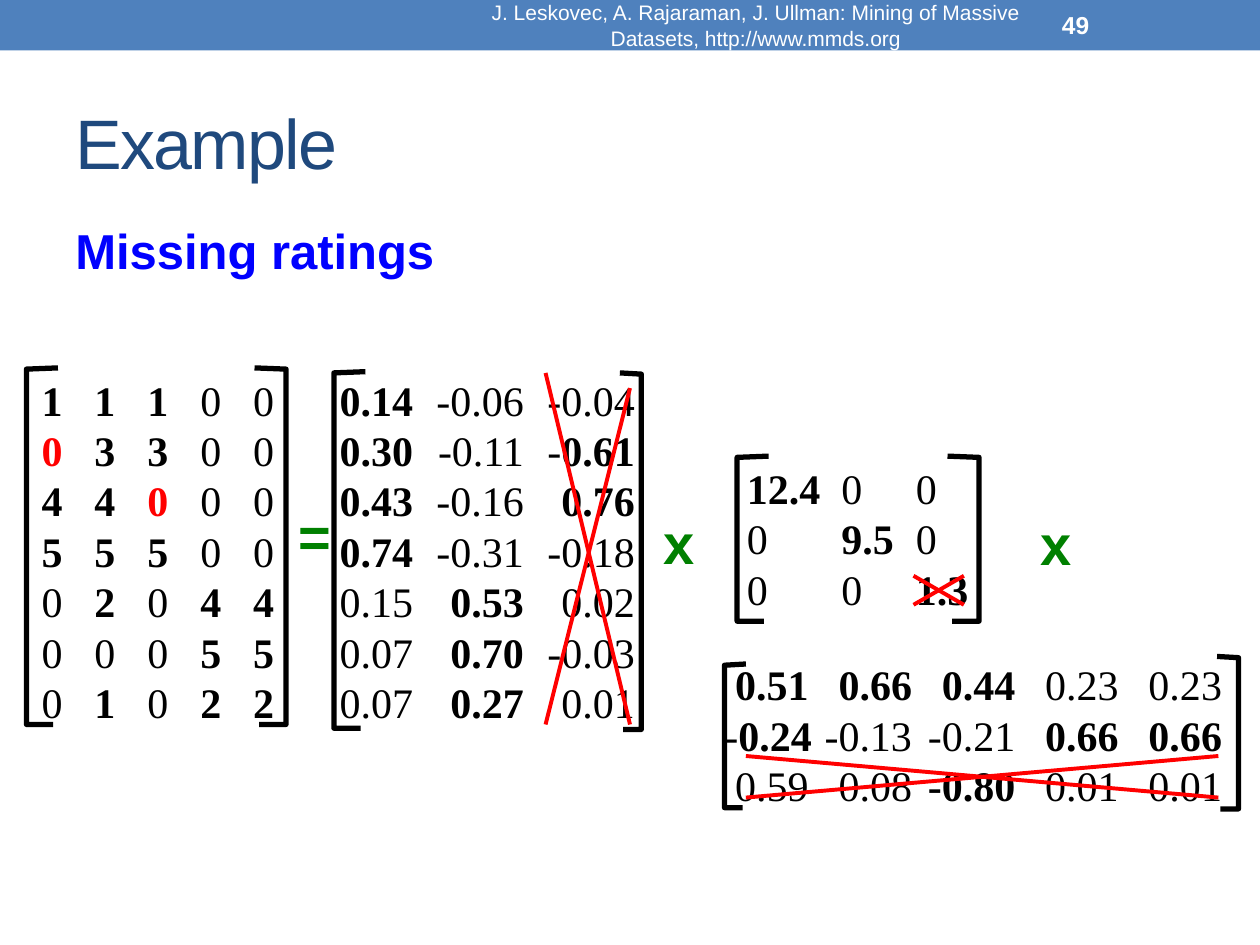
import pptx
import pptx.util
import pptx.dml.color
import pptx.enum.shapes
import pptx.enum.text
import pptx.oxml.ns
import lxml.etree

Inches, Pt = pptx.util.Inches, pptx.util.Pt
RGBColor = pptx.dml.color.RGBColor
ANCHOR, ALIGN = pptx.enum.text.MSO_ANCHOR, pptx.enum.text.PP_ALIGN
qn = pptx.oxml.ns.qn

BLACK = RGBColor(0x00, 0x00, 0x00)
WHITE = RGBColor(0xFF, 0xFF, 0xFF)
RED = RGBColor(0xFF, 0x00, 0x00)
GREEN = RGBColor(0x00, 0x80, 0x00)
BLUE = RGBColor(0x00, 0x00, 0xFF)
NAVY = RGBColor(0x1F, 0x49, 0x7D)
BAND = RGBColor(0x4F, 0x81, 0xBD)

# Matrix cells: what follows "*" is bold, what follows "!" is bold and red
RATINGS = [
    "*1 *1 *1 0 0", "!0 *3 *3 0 0", "*4 *4 !0 0 0", "*5 *5 *5 0 0",
    "0 *2 0 *4 *4", "0 0 0 *5 *5", "0 *1 0 *2 *2",
]
USERS = [
    "*0.14 -0.06 -0.04", "*0.30 -0.11 -*0.61", "*0.43 -0.16 *0.76",
    "*0.74 -0.31 -0.18", "0.15 *0.53 0.02", "0.07 *0.70 -0.03",
    "0.07 *0.27 0.01",
]
SIGMA = ["*12.4 0 0", "0 *9.5 0", "0 0 *1.3"]
ITEMS = [
    "*0.51 *0.66 *0.44 0.23 0.23",
    "-*0.24 -0.13 -0.21 *0.66 *0.66",
    "0.59 0.08 *-0.80 0.01 0.01",
]


def add_run(p, text, size, color, bold=False, font="Arial"):
    r = p.add_run()
    r.text = text
    r.font.size, r.font.name, r.font.bold = Pt(size), font, bold
    r.font.color.rgb = color
    return r


def add_box(s, box, anchor=ANCHOR.TOP, wrap=True):
    tf = s.shapes.add_textbox(*map(Inches, box)).text_frame
    tf.word_wrap, tf.vertical_anchor = wrap, anchor
    return tf


def add_header(s, box):
    """Coloured band with the credit line and the page number."""
    left, top, width, height = box
    sp = s.shapes.add_shape(pptx.enum.shapes.MSO_SHAPE.RECTANGLE, *map(Inches, box))
    sp.shadow.inherit = False
    sp.fill.solid()
    sp.fill.fore_color.rgb = BAND
    sp.line.fill.background()

    inner = top + 0.02, height - 0.04
    p = add_box(s, (left + 3.75, inner[0], 4.5, inner[1]), ANCHOR.MIDDLE).paragraphs[0]
    p.alignment = ALIGN.CENTER
    add_run(p, "J. Leskovec, A. Rajaraman, J. Ullman: Mining of Massive Datasets, "
               "http://www.mmds.org", 12, WHITE)
    p = add_box(s, (left + 8.33, inner[0], 1.17, inner[1]), ANCHOR.MIDDLE).paragraphs[0]
    add_run(p, "49", 14, WHITE, bold=True)


def add_headings(s, box):
    """Title, with the subheading below it."""
    left, top, width, height = box
    tf = add_box(s, (left, top, width, 1.08), ANCHOR.MIDDLE)
    r = add_run(tf.paragraphs[0], "Example", 40, NAVY)
    r.font._element.set("spc", "-100")
    p = add_box(s, (left, top + 1.17, width, height - 1.17)).paragraphs[0]
    p.line_spacing = 0.9
    add_run(p, "Missing ratings", 28, BLUE, bold=True)


def add_bracket(s, x, top, bottom, lip):
    """Square bracket at x; a negative lip makes it a right bracket."""
    points = [(x + lip, top), (x, top + 0.01), (x, bottom), (x + 0.85 * lip, bottom)]
    points = [tuple(map(Inches, point)) for point in points]
    builder = s.shapes.build_freeform(*points[0])
    builder.add_line_segments(points[1:], close=False)
    sp = builder.convert_to_shape()
    sp.shadow.inherit = False
    sp.fill.background()
    sp.line.color.rgb, sp.line.width = BLACK, Pt(3)


def add_matrix(s, box, rows, stops, align="l", inset=0.1):
    """Rows of numbers set on tab stops, measured from the left inset."""
    tf = add_box(s, box)
    tf.margin_left = Inches(inset)
    for i, row in enumerate(rows):
        p = tf.add_paragraph() if i else tf.paragraphs[0]
        tabs = lxml.etree.SubElement(p._p.get_or_add_pPr(), qn("a:tabLst"))
        for stop in stops:
            lxml.etree.SubElement(tabs, qn("a:tab"), pos=str(Inches(stop)), algn=align)
        for j, cell in enumerate(row.split()):
            mark = "!" if "!" in cell else "*"
            plain, _, strong = cell.partition(mark)
            lead = "\t" if j or align == "r" else ""
            if lead + plain:
                add_run(p, lead + plain, 24, BLACK, font="Times New Roman")
            if strong:
                color = RED if mark == "!" else BLACK
                add_run(p, strong, 24, color, True, "Times New Roman")


def add_operator(s, box, sign):
    tf = add_box(s, box, ANCHOR.MIDDLE, wrap=False)
    add_run(tf.paragraphs[0], sign, 32, GREEN, bold=True)


def add_cross(s, box, drop=0):
    """Two red diagonals; drop lowers the top right corner."""
    left, top, width, height = box
    right, bottom = left + width, top + height
    for ends in ((left, top, right, bottom), (right, top + drop, left, bottom)):
        cn = s.shapes.add_connector(
            pptx.enum.shapes.MSO_CONNECTOR.STRAIGHT, *map(Inches, ends))
        cn.line.color.rgb, cn.line.width = RED, Pt(2.25)
        lxml.etree.SubElement(cn._element.spPr, qn("a:effectLst"))


def main():
    prs = pptx.Presentation()
    prs.slide_width, prs.slide_height = Inches(10), Inches(7.5)
    s = prs.slides.add_slide(prs.slide_layouts[6])

    add_header(s, (0, 0, 10, 0.4))
    add_headings(s, (0.5, 0.58, 9, 6.5))

    # Brackets: x, top, bottom, lip
    for bracket in (
        (0.21, 2.92, 5.75, 0.25), (2.27, 2.92, 5.75, -0.25),
        (2.65, 2.95, 5.78, 0.25), (5.09, 2.96, 5.79, -0.17),
        (5.85, 3.62, 4.93, 0.25), (7.77, 3.62, 4.93, -0.25),
        (5.75, 5.27, 6.41, 0.17), (9.83, 5.21, 6.42, -0.17),
    ):
        add_bracket(s, *bracket)

    # Ratings = users x sigma x items
    add_matrix(s, (0.17, 2.92, 2.17, 2.93), RATINGS,
               [0.42 * i for i in range(1, 5)], inset=0.16)
    add_operator(s, (2.27, 3.93, 0.44, 0.64), "=")
    add_matrix(s, (2.5, 2.92, 2.75, 2.93), USERS,
               [0.68 + 0.88 * i for i in range(3)], align="r")
    add_operator(s, (5.17, 3.98, 0.44, 0.64), "x")
    add_matrix(s, (5.83, 3.62, 2.17, 1.31), SIGMA, [0.75, 1.34])
    add_operator(s, (8.16, 3.99, 0.44, 0.64), "x")
    add_matrix(s, (5.65, 5.18, 4.25, 1.31), ITEMS,
               [0.67 + 0.82 * i for i in range(5)], align="r")

    # The dropped third dimension
    add_cross(s, (4.33, 2.96, 0.67, 2.79), drop=0.12)
    add_cross(s, (5.92, 6, 3.75, 0.33))
    add_cross(s, (7.25, 4.57, 0.4, 0.23))

    prs.save("out.pptx")


if __name__ == "__main__":
    main()
